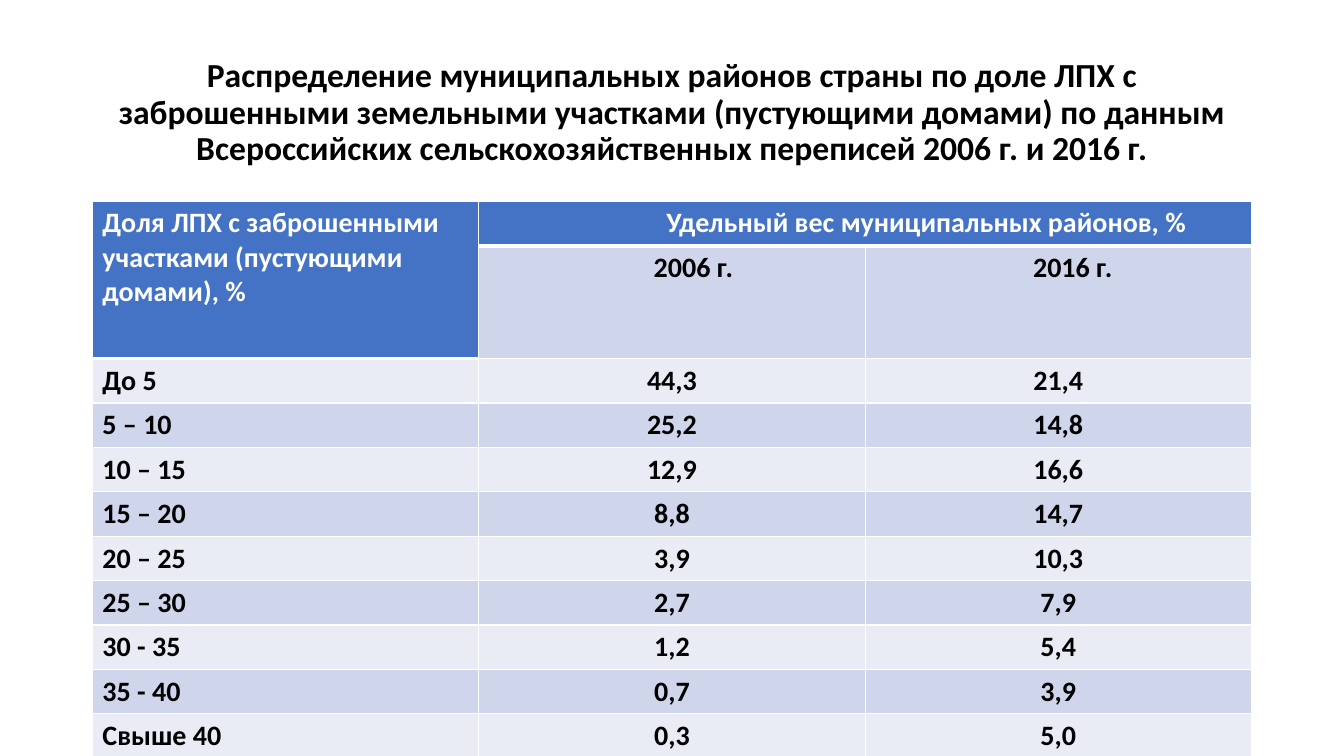
"""Build a slide comparing 2006 and 2016 shares of districts by abandoned plots."""
import pptx
import pptx.dml.color
import pptx.enum.text
import pptx.oxml
import pptx.oxml.ns
import pptx.util
from dataclasses import dataclass

TITLE = ("Распределение муниципальных районов страны по доле ЛПХ с заброшенными "
         "земельными участками (пустующими домами) по данным Всероссийских "
         "сельскохозяйственных переписей 2006 г. и 2016 г.")
HEADER = [
    ("Доля ЛПХ с заброшенными участками (пустующими домами), %",
     "Удельный вес муниципальных районов, %", ""),
    ("", "2006 г.", "2016 г."),
]
SHARES = [
    ("До 5", "44,3", "21,4"),
    ("5 – 10", "25,2", "14,8"),
    ("10 – 15", "12,9", "16,6"),
    ("15 – 20", "8,8", "14,7"),
    ("20 – 25", "3,9", "10,3"),
    ("25 – 30", "2,7", "7,9"),
    ("30 - 35", "1,2", "5,4"),
    ("35 - 40", "0,7", "3,9"),
    ("Свыше 40", "0,3", "5,0"),
]
HEADER_INSETS = {(0, 1): 134, (1, 1): 125, (1, 2): 120}
LEFT, WIDTH = 66, 828
TITLE_TOP, TITLE_HEIGHT = 28.75, 104.4
TABLE_TOP, ROW_HEIGHT = 143.75, 29.2


@dataclass(frozen=True)
class Theme:
    """Colours, font and sizes of the slide."""
    font: str = "Calibri"
    title_size: int = 24
    table_size: int = 20
    text: str = "000000"
    white: str = "FFFFFF"
    header: str = "4472C4"
    bands: tuple = ("E9EBF5", "CFD5EA")
    thin: int = 1
    thick: int = 3


THEME = Theme()
Pt = pptx.util.Pt
RGB = pptx.dml.color.RGBColor.from_string
ALIGN = pptx.enum.text.PP_ALIGN


def write(tf, text, size=THEME.table_size, color=THEME.text, align=ALIGN.LEFT, spacing=None):
    """Put one bold formatted paragraph into a text frame."""
    p = tf.paragraphs[0]
    p.alignment = align
    p.line_spacing = spacing
    r = p.add_run()
    r.text = text
    r.font.name = THEME.font
    r.font.size = Pt(size)
    r.font.bold = True
    r.font.color.rgb = RGB(color)


def set_borders(cell, bottom):
    """Draw white borders round a cell, with the given bottom width."""
    widths = {"lnL": THEME.thin, "lnR": THEME.thin, "lnT": THEME.thin, "lnB": bottom}
    for i, (tag, width) in enumerate(widths.items()):
        line = pptx.oxml.parse_xml(
            f'<a:{tag} {pptx.oxml.ns.nsdecls("a")} w="{Pt(width)}"><a:solidFill>'
            f'<a:srgbClr val="{THEME.white}"/></a:solidFill></a:{tag}>')
        cell._tc.get_or_add_tcPr().insert(i, line)


def add_title(s):
    """Fill and place the title placeholder."""
    sp = s.shapes.title
    sp.left, sp.top = Pt(LEFT), Pt(TITLE_TOP)
    sp.width, sp.height = Pt(WIDTH), Pt(TITLE_HEIGHT)
    tf = sp.text_frame
    tf.word_wrap = True
    tf.auto_size = pptx.enum.text.MSO_AUTO_SIZE.NONE
    tf.vertical_anchor = pptx.enum.text.MSO_ANCHOR.MIDDLE
    write(tf, TITLE, size=THEME.title_size, align=ALIGN.CENTER, spacing=0.9)


def add_shares_table(s):
    """Add the table with its merged two-row header."""
    rows = HEADER + SHARES
    columns = len(rows[0])
    table = s.shapes.add_table(len(rows), columns, Pt(LEFT), Pt(TABLE_TOP),
                               Pt(WIDTH), Pt(ROW_HEIGHT * len(rows))).table
    for column in table.columns:
        column.width = Pt(WIDTH / columns)
    for i, row in enumerate(rows):
        table.rows[i].height = Pt(ROW_HEIGHT)
        for j, text in enumerate(row):
            cell = table.cell(i, j)
            is_header = i == 0 or (i == 1 and j == 0)
            is_value = i >= len(HEADER) and j > 0
            cell.fill.solid()
            cell.fill.fore_color.rgb = RGB(THEME.header if is_header else THEME.bands[i % 2])
            set_borders(cell, THEME.thick if is_header else THEME.thin)
            if (i, j) in HEADER_INSETS:
                cell.margin_left = Pt(HEADER_INSETS[i, j])
            if text:
                write(cell.text_frame, text, color=THEME.white if is_header else THEME.text,
                      align=ALIGN.CENTER if is_value else ALIGN.LEFT)
    table.cell(0, 0).merge(table.cell(1, 0))
    table.cell(0, 1).merge(table.cell(0, 2))


def main():
    """Create and save the presentation."""
    prs = pptx.Presentation()
    prs.slide_width, prs.slide_height = Pt(960), Pt(540)
    s = prs.slides.add_slide(prs.slide_layouts[5])
    add_title(s)
    add_shares_table(s)
    prs.save("out.pptx")


if __name__ == "__main__":
    main()
